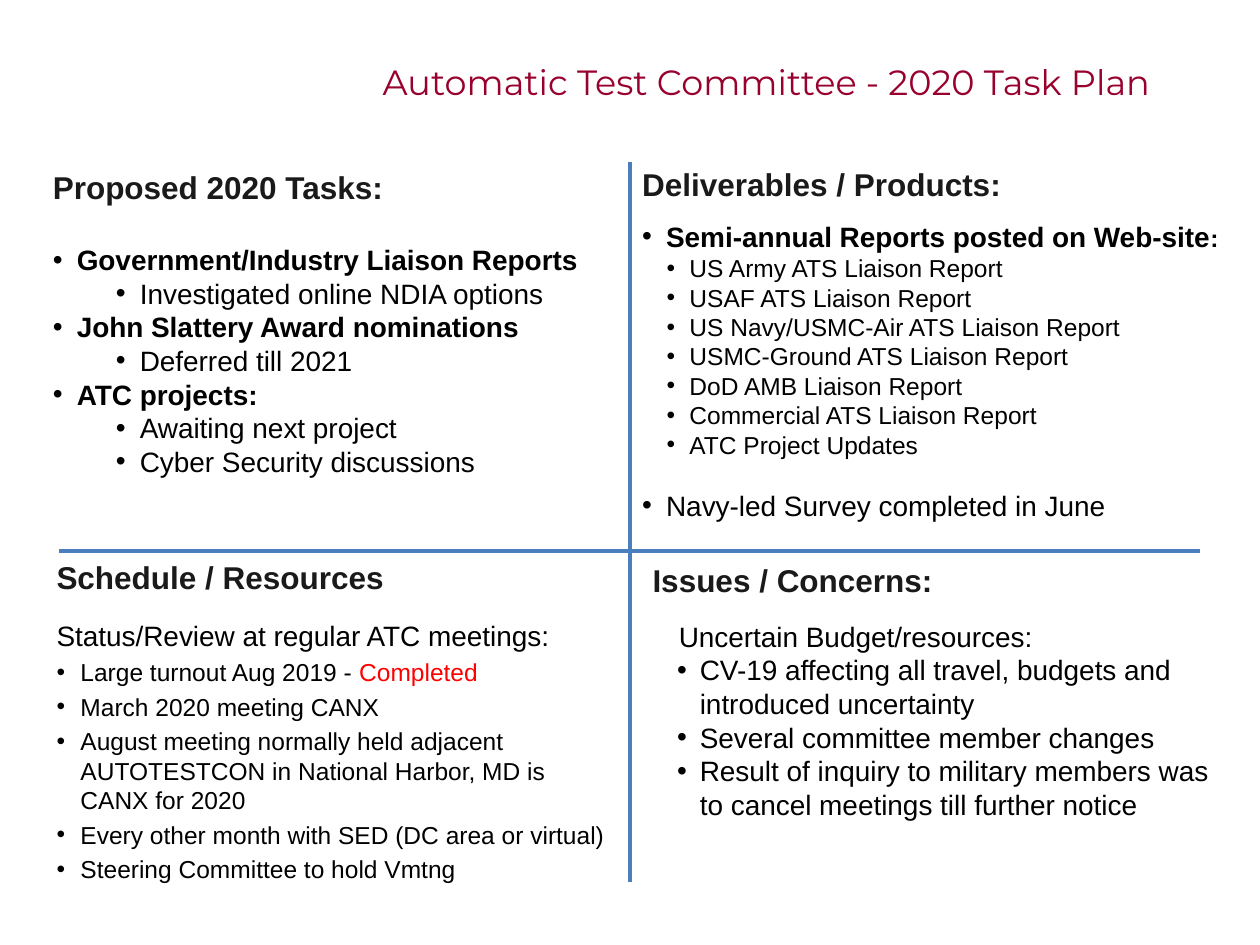
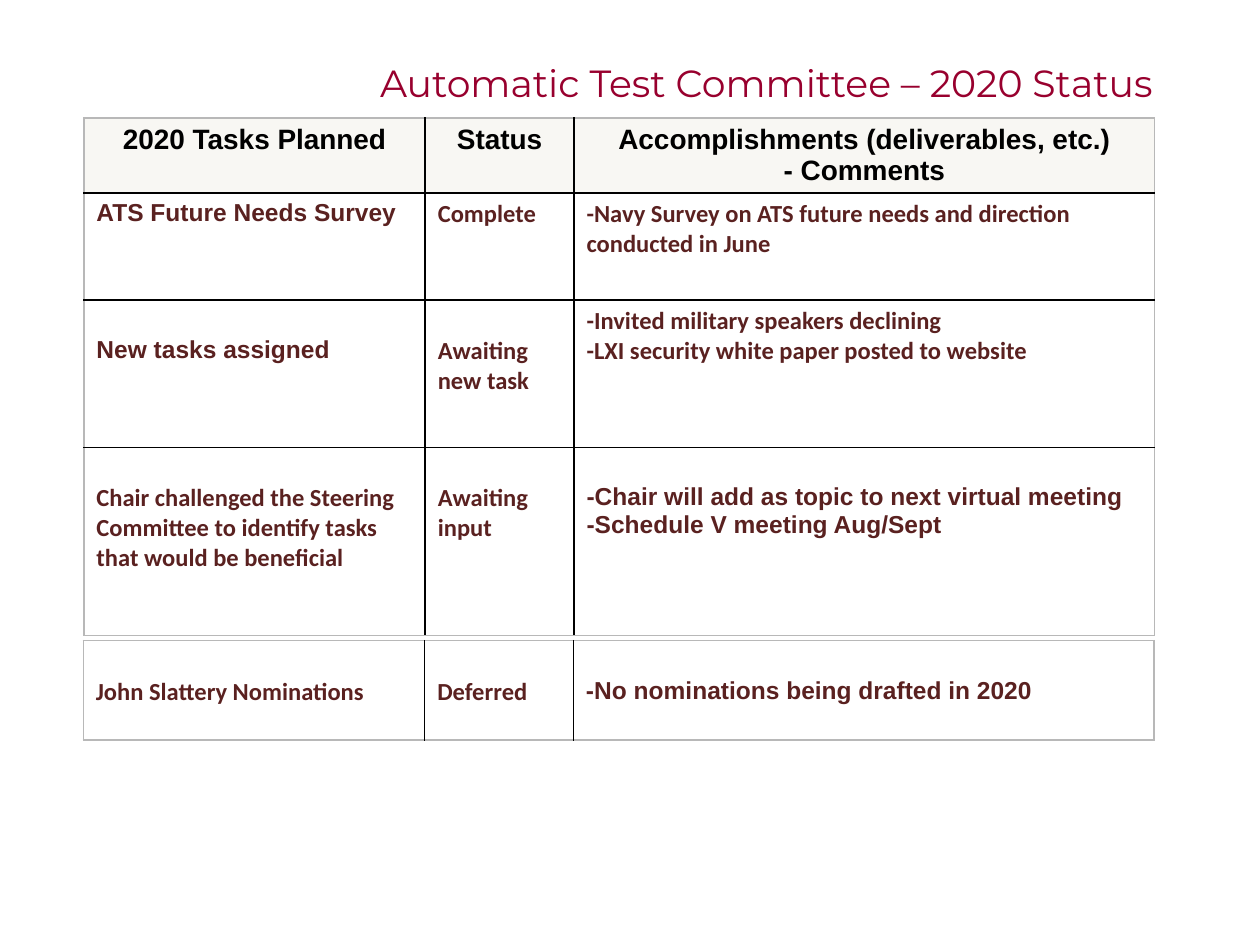
"""Build the two-slide 2020 task plan and status report of the committee."""
from dataclasses import dataclass

import pptx
import pptx.dml.color
import pptx.enum.shapes
import pptx.enum.text
import pptx.oxml
import pptx.oxml.ns
import pptx.util

Pt = pptx.util.Pt
COLORS = {
    "title": "98002E", "heading": "1A1A1A", "text": "000000", "done": "FF0000",
    "divider": "4B7EBC", "entry": "5A2120", "header": "F8F7F3",
    "frame": "B8B8B8", "grid": "000000",
}
TITLE_ONLY = 5
COLUMN_WIDTHS = (195.1, 85, 331.9)
CELL_MARGIN = 3.6
LOWERED = 20.7


@dataclass
class Style:
    """Paragraph look; lengths in points."""
    size: float = 16
    bold: bool = False
    left: float = 0
    hang: float = 0
    color: str = "text"
    font: str = "Arial"


HEADING = Style(18, True, color="heading")
TASK = Style(16, True, 13.7, 13.7)
TASK_DETAIL = Style(16, False, 49.7, 13.7)
REPORT = Style(14, False, 27, 13)
FINDING = Style(16, False, 13.7, 13.7)
STATUS = Style()
MEETING = Style(14, False, 13.7, 13.7)
BUDGET = Style(left=15)
ISSUE = Style(16, False, 27, 13)
COLUMN_HEAD = Style(16, True)
ENTRY = Style(14, True, color="entry")
ENTRY_CALIBRI = Style(14, True, color="entry", font="Calibri")


def rgb(name):
    """Return the named colour."""
    return pptx.dml.color.RGBColor.from_string(COLORS[name])


def add_sub(parent, tag, **attributes):
    """Append a drawing element to parent and return it."""
    element = pptx.oxml.parse_xml(f"<{tag} {pptx.oxml.ns.nsdecls('a')}/>")
    for key, value in attributes.items():
        element.set(key, str(value))
    parent.append(element)
    return element


def format_paragraph(paragraph, style):
    """Apply indent, bullet and font to a paragraph."""
    properties = paragraph._p.get_or_add_pPr()
    properties.set("marL", str(Pt(style.left)))
    properties.set("indent", str(-Pt(style.hang)))
    if style.hang:
        add_sub(properties, "a:buFont", typeface="Arial")
        add_sub(properties, "a:buChar", char="•")
    font = paragraph.font
    font.name, font.size, font.bold = style.font, Pt(style.size), style.bold
    font.color.rgb = rgb(style.color)


def fill_text(frame, entries):
    """Write (text, style, space before) entries, one paragraph each."""
    for index, (text, style, gap) in enumerate(entries):
        paragraph = frame.add_paragraph() if index else frame.paragraphs[0]
        format_paragraph(paragraph, style)
        paragraph.add_run().text = text
        if gap:
            paragraph.space_before = Pt(gap)


def items(style, texts, gap=0):
    """Give several texts one style and one gap."""
    return [(text, style, gap) for text in texts]


def add_title_slide(presentation, title, size):
    """Add a title-only slide with the shared title style."""
    slide = presentation.slides.add_slide(presentation.slide_layouts[TITLE_ONLY])
    shape = slide.shapes.title
    shape.left, shape.top, shape.width, shape.height = Pt(168), Pt(21.6), Pt(540), Pt(50.4)
    frame = shape.text_frame
    frame.vertical_anchor = pptx.enum.text.MSO_ANCHOR.MIDDLE
    fill_text(frame, [(title, Style(size, color="title", font="Montserrat"), 0)])
    frame.paragraphs[0].alignment = pptx.enum.text.PP_ALIGN.CENTER
    return slide


def add_divider(slide, *ends):
    """Draw a straight divider between two points."""
    line = slide.shapes.add_connector(
        pptx.enum.shapes.MSO_CONNECTOR.STRAIGHT, *(Pt(value) for value in ends))
    line.line.color.rgb = rgb("divider")
    line.line.width = Pt(2)
    add_sub(line._element.spPr, "a:effectLst")


def add_quadrant(slide, left, top, width, height, heading, entries):
    """Add one quadrant of the plan and return its paragraphs."""
    box = slide.shapes.add_textbox(Pt(left), Pt(top), Pt(width), Pt(height))
    frame = box.text_frame
    frame.word_wrap = True
    fill_text(frame, [(heading, HEADING, 0)] + entries)
    return frame.paragraphs


def set_borders(cell, outer_sides):
    """Draw frame-coloured outer borders and grid-coloured inner ones."""
    properties = cell._tc.get_or_add_tcPr()
    for position, side in enumerate("LRTB"):
        line = pptx.oxml.parse_xml(
            f"<a:ln{side} {pptx.oxml.ns.nsdecls('a')} w='{Pt(1)}'/>")
        color = "frame" if side in outer_sides else "grid"
        add_sub(add_sub(line, "a:solidFill"), "a:srgbClr", val=COLORS[color])
        properties.insert(position, line)


def add_status_table(slide, left, top, heights, rows, has_header):
    """Add a table; each cell is (style, top margin, lines)."""
    last_row, last_column = len(rows) - 1, len(COLUMN_WIDTHS) - 1
    table = slide.shapes.add_table(
        len(rows), len(COLUMN_WIDTHS), Pt(left), Pt(top),
        Pt(sum(COLUMN_WIDTHS)), Pt(sum(heights))).table
    table.first_row = table.horz_banding = False
    for column, width in zip(table.columns, COLUMN_WIDTHS):
        column.width = Pt(width)
    for row_index, (height, row) in enumerate(zip(heights, rows)):
        table.rows[row_index].height = Pt(height)
        for column_index, (style, margin, lines) in enumerate(row):
            cell = table.cell(row_index, column_index)
            cell.margin_top = Pt(margin)
            fill_text(cell.text_frame, items(style, lines))
            if has_header and row_index == 0:
                cell.fill.solid()
                cell.fill.fore_color.rgb = rgb("header")
                for paragraph in cell.text_frame.paragraphs:
                    paragraph.alignment = pptx.enum.text.PP_ALIGN.CENTER
            else:
                cell.fill.background()
            edges = {"L": column_index == 0, "R": column_index == last_column,
                     "T": row_index == 0, "B": row_index == last_row}
            set_borders(cell, [side for side, outer in edges.items() if outer])


def build_plan(presentation):
    """Build the four-quadrant task plan."""
    slide = add_title_slide(presentation, "Automatic Test Committee - 2020 Task Plan", 20)
    add_divider(slide, 33.8, 314.8, 685.8, 314.8)
    add_divider(slide, 360, 92.5, 360, 504)

    add_quadrant(slide, 23.1, 92.2, 317.5, 186.5, "Proposed 2020 Tasks:", [
        ("Government/Industry Liaison Reports", TASK, 21.4),
        ("Investigated online NDIA options", TASK_DETAIL, 0),
        ("John Slattery Award nominations", TASK, 0),
        ("Deferred till 2021", TASK_DETAIL, 0),
        ("ATC projects:", TASK, 0),
        ("Awaiting next project", TASK_DETAIL, 0),
        ("Cyber Security discussions", TASK_DETAIL, 0),
    ])

    reports = ["US Army", "USAF", "US Navy/USMC-Air", "USMC-Ground"]
    deliverables = add_quadrant(
        slide, 359.9, 90.7, 348.5, 213.1, "Deliverables / Products:",
        [("Semi-annual Reports posted on Web-site", TASK, 9.6)]
        + items(REPORT, [f"{name} ATS Liaison Report" for name in reports]
                + ["DoD AMB Liaison Report", "Commercial ATS Liaison Report",
                   "ATC Project Updates"])
        + [("Navy-led Survey completed in June", FINDING, 16.7)])
    colon = deliverables[1].add_run()
    colon.text = ":"
    colon.font.size = Pt(14)

    schedule = add_quadrant(
        slide, 25.2, 315.4, 334.8, 195.1, "Schedule / Resources",
        [("Status/Review at regular ATC meetings:", STATUS, 12.6)]
        + items(MEETING, [
            "Large turnout Aug 2019 - ",
            "March 2020 meeting CANX",
            "August meeting normally held adjacent AUTOTESTCON in National Harbor, "
            "MD is CANX for 2020",
            "Every other month with SED (DC area or virtual)",
            "Steering Committee to hold Vmtng",
        ], gap=3))
    completed = schedule[2].add_run()
    completed.text = "Completed"
    completed.font.color.rgb = rgb("done")

    add_quadrant(
        slide, 365.8, 316.8, 348.5, 177.1, "Issues / Concerns:",
        [("Uncertain Budget/resources:", BUDGET, 12)]
        + items(ISSUE, [
            "CV-19 affecting all travel, budgets and introduced uncertainty",
            "Several committee member changes",
            "Result of inquiry to military members was to cancel meetings "
            "till further notice",
        ]))


def build_status(presentation):
    """Build the status tables."""
    slide = add_title_slide(presentation, "Automatic Test Committee – 2020 Status", 21.6)
    header = [(COLUMN_HEAD, CELL_MARGIN, lines) for lines in (
        ["2020 Tasks Planned"], ["Status"],
        ["Accomplishments (deliverables, etc.)", "- Comments"])]
    add_status_table(slide, 47.9, 67.4, (42.5, 61.2, 84.2, 107.5), [
        header,
        [(ENTRY, CELL_MARGIN, ["ATS Future Needs Survey"]),
         (ENTRY_CALIBRI, CELL_MARGIN, ["Complete"]),
         (ENTRY_CALIBRI, CELL_MARGIN,
          ["-Navy Survey on ATS future needs and direction conducted in June"])],
        [(ENTRY, LOWERED, ["New tasks assigned"]),
         (ENTRY_CALIBRI, LOWERED, ["Awaiting new task"]),
         (ENTRY_CALIBRI, CELL_MARGIN,
          ["-Invited military speakers declining",
           "-LXI security white paper posted to website"])],
        [(ENTRY_CALIBRI, LOWERED,
          ["Chair challenged the Steering Committee to identify tasks "
           "that would be beneficial"]),
         (ENTRY_CALIBRI, LOWERED, ["Awaiting input"]),
         (ENTRY, LOWERED, ["-Chair will add as topic to next virtual meeting",
                           "-Schedule V meeting Aug/Sept"])],
    ], has_header=True)
    add_status_table(slide, 47.6, 366, (56.9,), [
        [(ENTRY_CALIBRI, LOWERED, ["John Slattery Nominations"]),
         (ENTRY_CALIBRI, LOWERED, ["Deferred"]),
         (ENTRY, LOWERED, ["-No nominations being drafted in 2020"])],
    ], has_header=False)


def main():
    """Create and save the presentation."""
    presentation = pptx.Presentation()
    presentation.slide_width, presentation.slide_height = Pt(720), Pt(540)
    build_plan(presentation)
    build_status(presentation)
    presentation.save("out.pptx")


if __name__ == "__main__":
    main()
